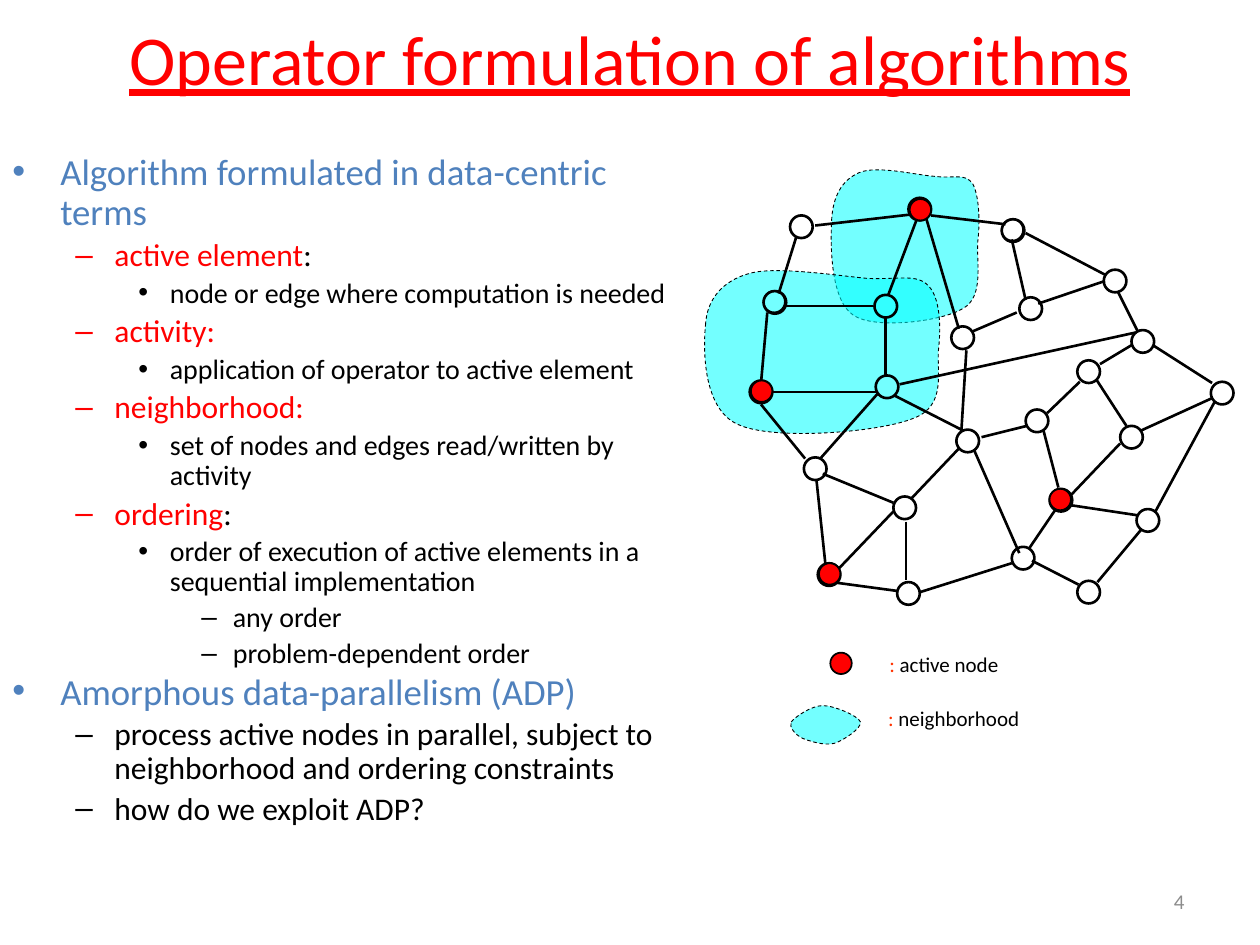
import pptx
import pptx.dml.color
import pptx.enum.dml
import pptx.enum.shapes
import pptx.enum.text
import pptx.oxml.ns
import pptx.util
from lxml import etree
from pptx.util import Inches

FONT = "Calibri"
BLACK, RED, BLUE, CYAN = "000000", "FF0000", "4F81BD", "00FFFF"
ORANGE, GREY = "FF3300", "8C8C8C"
NODE_SIZE, MARK_SIZE = 0.18, 0.17

# Per level: left margin, hanging indent, bullet, text size
LEVELS = [(0.38, 0.38, "•", 21), (0.81, 0.31, "–", 18),
          (1.25, 0.25, "•", 16), (1.75, 0.25, "–", 16)]

# Level, then (text, colour) spans
OUTLINE = [
    (0, [("Algorithm formulated in data-centric terms", BLUE)]),
    (1, [("active element", RED), (":", BLACK)]),
    (2, [("node or edge where computation is needed", BLACK)]),
    (1, [("activity:", RED)]),
    (2, [("application of operator to active element", BLACK)]),
    (1, [("neighborhood:", RED)]),
    (2, [("set of nodes and edges read/written by activity", BLACK)]),
    (1, [("ordering", RED), (":", BLACK)]),
    (2, [("order of execution of active elements in a sequential implementation", BLACK)]),
    (3, [("any order", BLACK)]),
    (3, [("problem-dependent order", BLACK)]),
    (0, [("Amorphous data-parallelism (ADP)", BLUE)]),
    (1, [("process active nodes in parallel, subject to neighborhood "
          "and ordering constraints", BLACK)]),
    (1, [("how do we exploit ADP?", BLACK)]),
]

# Start point, then cubic curves (two control points and an end point)
UPPER_AREA = [(6.6, 1.75),
              (6.61, 1.56, 6.68, 1.43, 6.82, 1.37), (6.96, 1.31, 7.27, 1.39, 7.42, 1.4),
              (7.57, 1.42, 7.66, 1.37, 7.72, 1.46), (7.77, 1.55, 7.78, 1.76, 7.76, 1.92),
              (7.75, 2.09, 7.81, 2.36, 7.64, 2.45), (7.48, 2.55, 6.94, 2.62, 6.77, 2.5),
              (6.59, 2.38, 6.59, 1.94, 6.6, 1.75)]
LOWER_AREA = [(5.6, 2.58),
              (5.61, 2.38, 5.73, 2.23, 5.95, 2.17), (6.16, 2.11, 6.66, 2.19, 6.89, 2.21),
              (7.13, 2.22, 7.28, 2.17, 7.37, 2.27), (7.46, 2.36, 7.47, 2.59, 7.45, 2.76),
              (7.43, 2.94, 7.52, 3.22, 7.25, 3.32), (6.99, 3.43, 6.14, 3.5, 5.86, 3.37),
              (5.58, 3.25, 5.58, 2.78, 5.6, 2.58)]
LEGEND_AREA = [(6.28, 5.73),
               (6.31, 5.69, 6.44, 5.6, 6.53, 5.6), (6.62, 5.6, 6.81, 5.68, 6.83, 5.73),
               (6.84, 5.78, 6.69, 5.88, 6.62, 5.9), (6.54, 5.92, 6.42, 5.88, 6.37, 5.86),
               (6.31, 5.83, 6.26, 5.77, 6.28, 5.73)]

NODES = [(6.06, 2.31), (5.95, 3.02), (6.95, 2.98), (7.59, 3.41), (6.38, 3.63), (7.09, 3.94),
         (6.49, 4.47), (8.55, 4.61), (7.12, 4.62), (7.55, 2.59), (8.14, 3.25), (8.03, 4.34),
         (6.27, 1.71), (7.21, 1.57), (6.94, 2.34), (7.95, 1.74), (8.09, 2.36), (8.76, 2.14),
         (8.33, 3.88), (8.55, 2.86), (8.98, 2.62), (8.89, 3.38), (9.02, 4.04), (9.61, 3.03)]
ACTIVE_MARKS = [(6.5, 4.47), (8.33, 3.88), (5.96, 3.02), (7.22, 1.58)]
PLAIN_MARKS = [(6.06, 2.31), (7.95, 1.74)]

EDGES = [
    (6.32, 1.88, 6.18, 2.33), (6.47, 1.79, 7.25, 1.7), (6.23, 2.43, 6.93, 2.43),
    (7.28, 1.73, 7.05, 2.34), (6.09, 2.48, 6.04, 3.04), (6.04, 3.21, 6.39, 3.64),
    (6.51, 3.64, 6.97, 3.12), (6.13, 3.11, 6.95, 3.11), (7.03, 2.51, 7.03, 2.98),
    (7.35, 1.73, 7.61, 2.61), (6.55, 4.47, 6.48, 3.81), (6.65, 4.52, 7.09, 4.06),
    (6.53, 3.76, 7.09, 3.99), (7.23, 3.96, 7.61, 3.56), (7.1, 3.14, 7.63, 3.41),
    (6.6, 4.62, 7.12, 4.69), (7.19, 4.14, 7.19, 4.6), (7.3, 4.7, 8.03, 4.47),
    (7.39, 1.71, 7.98, 1.78), (8.03, 1.9, 8.14, 2.38), (7.72, 2.63, 8.07, 2.48),
    (8.14, 1.85, 8.77, 2.18), (7.79, 3.47, 8.15, 3.38), (7.67, 2.78, 7.63, 3.42),
    (8.31, 3.28, 8.57, 3.03), (8.17, 4.35, 8.38, 4.04), (8.19, 4.45, 8.56, 4.64),
    (8.28, 3.41, 8.4, 3.87), (8.49, 3.94, 8.89, 3.52), (8.7, 3.01, 8.94, 3.38),
    (8.24, 2.41, 8.77, 2.23), (9.05, 3.42, 9.62, 3.16), (8.73, 2.89, 8.98, 2.74),
    (8.87, 2.31, 9.03, 2.63), (9.15, 2.74, 9.62, 3.04), (8.71, 4.62, 9.06, 4.2),
    (9.17, 4.06, 9.64, 3.19), (8.5, 4.01, 9.03, 4.09), (7.73, 3.57, 8.09, 4.39),
    (7.14, 3.05, 9.01, 2.64),
]


def color(hex_text):
    return pptx.dml.color.RGBColor.from_string(hex_text)


def add_child(parent, tag, **attributes):
    return etree.SubElement(parent, pptx.oxml.ns.qn(tag), attributes)


def set_line(line, width):
    line.color.rgb = color(BLACK)
    line.width = pptx.util.Pt(width)


def add_box(page, left, top, width, height, anchor="TOP", wrap=True):
    frame = page.shapes.add_textbox(
        Inches(left), Inches(top), Inches(width), Inches(height)).text_frame
    frame.word_wrap = wrap
    frame.vertical_anchor = getattr(pptx.enum.text.MSO_ANCHOR, anchor)
    return frame


def write_spans(para, spans, size):
    for text, hex_text in spans:
        span = para.add_run()
        span.text = text
        span.font.name = FONT
        span.font.size = pptx.util.Pt(size)
        span.font.color.rgb = color(hex_text)


def add_line_of_text(page, place, text, size, hex_text, align):
    para = add_box(page, *place, anchor="MIDDLE").paragraphs[0]
    para.alignment = getattr(pptx.enum.text.PP_ALIGN, align)
    write_spans(para, [(text, hex_text)], size)
    return para


def add_outline(page):
    frame = add_box(page, 0, 1.17, 5.42, 6.17)
    for number, (level, spans) in enumerate(OUTLINE):
        para = frame.add_paragraph() if number else frame.paragraphs[0]
        margin, hanging, bullet, size = LEVELS[level]
        para.level = level
        para.line_spacing = 0.8 if number and level == 0 else 0.9
        para.space_before = pptx.util.Pt(0.2 * size if number else 0)
        properties = para._p.get_or_add_pPr()
        properties.set("marL", str(Inches(margin)))
        properties.set("indent", str(-Inches(hanging)))
        add_child(properties, "a:buFont", typeface="Arial")
        add_child(properties, "a:buChar", char=bullet)
        write_spans(para, spans, size)


def add_circle(page, left, top, size, line_width, fill=None):
    circle = page.shapes.add_shape(pptx.enum.shapes.MSO_SHAPE.OVAL, Inches(left),
                                   Inches(top), Inches(size), Inches(size))
    circle.shadow.inherit = False
    if fill:
        circle.fill.solid()
        circle.fill.fore_color.rgb = color(fill)
    else:
        circle.fill.background()
    set_line(circle.line, line_width)


def bend_segments(area):
    """Turn each three straight segments into one cubic curve."""
    segments = area._element.spPr.findall(".//" + pptx.oxml.ns.qn("a:lnTo"))
    for first, second, third in zip(*[iter(segments)] * 3):
        curve = etree.Element(pptx.oxml.ns.qn("a:cubicBezTo"))
        first.addprevious(curve)
        for segment in (first, second, third):
            curve.append(segment[0])
            segment.getparent().remove(segment)


def add_neighborhood(page, outline):
    start, *curves = outline
    points = [(Inches(curve[i]), Inches(curve[i + 1])) for curve in curves for i in (0, 2, 4)]
    builder = page.shapes.build_freeform(*map(Inches, start))
    builder.add_line_segments(points, close=True)
    area = builder.convert_to_shape()
    bend_segments(area)
    area.shadow.inherit = False
    area.fill.solid()
    area.fill.fore_color.rgb = color(CYAN)
    shade = area._element.spPr.find(".//" + pptx.oxml.ns.qn("a:srgbClr"))
    add_child(shade, "a:alpha", val="55000")
    set_line(area.line, 0.5)
    area.line.dash_style = pptx.enum.dml.MSO_LINE.DASH


def add_edge(page, ends):
    edge = page.shapes.add_connector(
        pptx.enum.shapes.MSO_CONNECTOR.STRAIGHT, *map(Inches, ends))
    set_line(edge.line, 1.5)
    add_child(edge._element.spPr, "a:effectLst")


def add_legend_label(page, place, text):
    frame = add_box(page, *place, wrap=False)
    frame.auto_size = pptx.enum.text.MSO_AUTO_SIZE.SHAPE_TO_FIT_TEXT
    para = frame.paragraphs[0]
    para.line_spacing = 0.9
    write_spans(para, [(": ", ORANGE), (text, BLACK)], 12)


def main():
    deck = pptx.Presentation()
    deck.slide_width, deck.slide_height = Inches(10), Inches(7.5)
    page = deck.slides.add_slide(deck.slide_layouts[6])
    title = add_line_of_text(page, (0.5, -0.17, 9, 1.25),
                             "Operator formulation of algorithms", 40, RED, "CENTER")
    title.runs[0].font.underline = True
    add_outline(page)
    add_line_of_text(page, (7.17, 6.95, 2.33, 0.4), "4", 12, GREY, "RIGHT")
    for area in (UPPER_AREA, LOWER_AREA):
        add_neighborhood(page, area)
    for node in NODES:
        add_circle(page, *node, NODE_SIZE, 1.5)
    for edge in EDGES:
        add_edge(page, edge)
    add_circle(page, 6.59, 5.18, MARK_SIZE, 1, RED)
    add_neighborhood(page, LEGEND_AREA)
    add_legend_label(page, (6.96, 5.14, 1.14, 0.28), "active node")
    add_legend_label(page, (6.95, 5.57, 1.31, 0.28), "neighborhood")
    for mark in PLAIN_MARKS:
        add_circle(page, *mark, MARK_SIZE, 1)
    for mark in ACTIVE_MARKS:
        add_circle(page, *mark, MARK_SIZE, 1, RED)
    deck.save("out.pptx")


if __name__ == "__main__":
    main()
